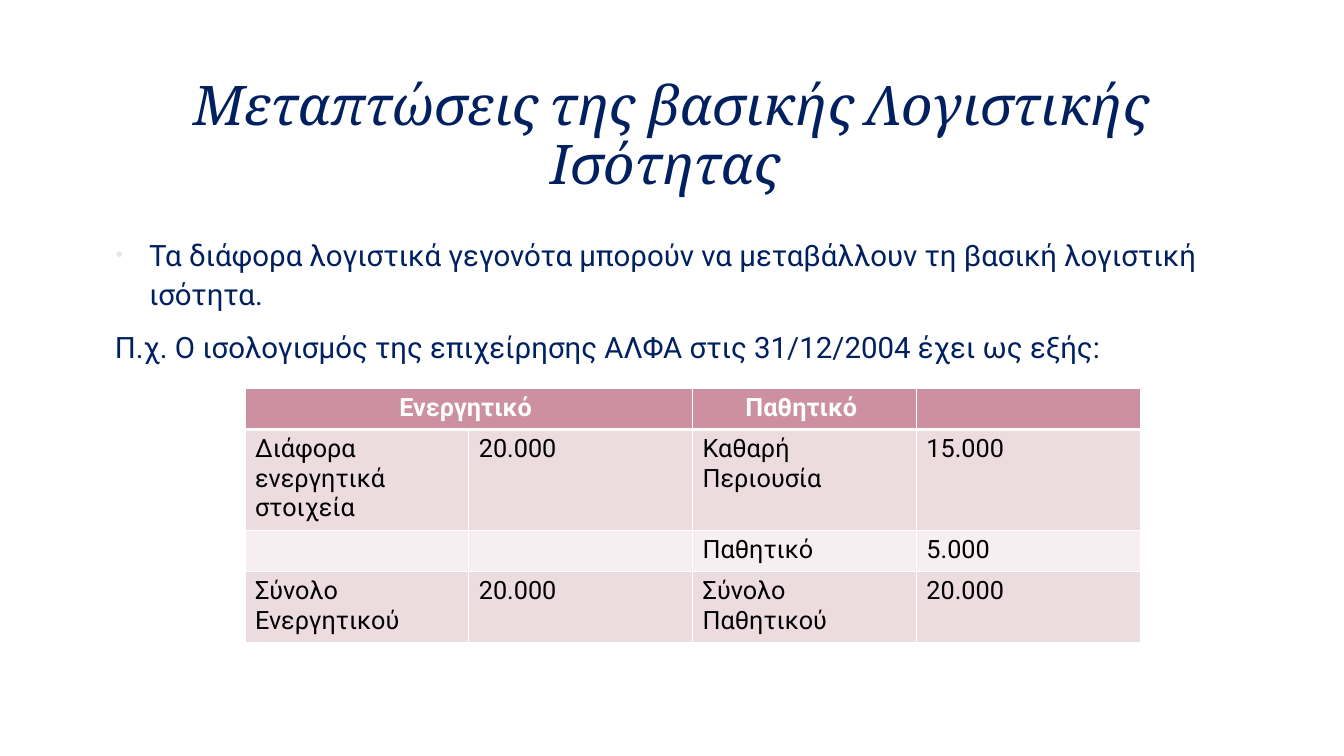
from pptx import Presentation
from pptx.dml.color import RGBColor
from pptx.enum.text import MSO_ANCHOR, PP_ALIGN
from pptx.oxml import parse_xml
from pptx.oxml.ns import nsdecls, qn
from pptx.util import Inches, Pt

CENTER, LEFT = PP_ALIGN.CENTER, PP_ALIGN.LEFT
TOP, MIDDLE = MSO_ANCHOR.TOP, MSO_ANCHOR.MIDDLE

THEME = {
    "title_font": "Cambria", "body_font": "Roboto",
    "title_size": 39, "body_size": 21, "table_size": 18,
    "navy": "002060", "outline": "404040", "bullet": "E2E8E6",
    "white": "FFFFFF", "black": "000000",
    "header": "CC90A0", "bands": ["ECDBDF", "F6EEF0"],
}


def style_font(paragraph, name, size, color):
    font = paragraph.font
    font.name = name
    font.size = Pt(size)
    font.color.rgb = RGBColor.from_string(color)


def add_text_effects(paragraph):
    properties = paragraph._p.pPr.find(qn("a:defRPr"))
    properties.insert(0, parse_xml(
        f'<a:ln w="9525" {nsdecls("a")}><a:solidFill><a:srgbClr val="{THEME["outline"]}">'
        '<a:alpha val="10000"/></a:srgbClr></a:solidFill></a:ln>'))
    properties.find(qn("a:solidFill")).addnext(parse_xml(
        f'<a:effectLst {nsdecls("a")}><a:outerShdw blurRad="38100" dist="25400" dir="2700000">'
        '<a:srgbClr val="000000"><a:alpha val="50000"/></a:srgbClr></a:outerShdw></a:effectLst>'))


presentation = Presentation()
presentation.slide_width = Inches(13.33)
presentation.slide_height = Inches(7.5)
slide = presentation.slides.add_slide(presentation.slide_layouts[6])

title_box = slide.shapes.add_textbox(Inches(1), Inches(0.67), Inches(11.32), Inches(1.38))
title_box.text_frame.word_wrap = True
title_box.text_frame.vertical_anchor = MIDDLE
title = title_box.text_frame.paragraphs[0]
title.text = "Μεταπτώσεις της βασικής Λογιστικής Ισότητας "
title.alignment = CENTER
title.line_spacing = 0.9
style_font(title, THEME["title_font"], THEME["title_size"], THEME["navy"])
title.font.italic = True
add_text_effects(title)

body_box = slide.shapes.add_textbox(Inches(1), Inches(2.27), Inches(11.32), Inches(4.06))
body = body_box.text_frame
body.word_wrap = True
body.vertical_anchor = TOP
body_lines = [
    ("Τα διάφορα λογιστικά γεγονότα μπορούν να μεταβάλλουν τη βασική λογιστική ισότητα.", 0.38, -0.33),
    ("Π.χ. Ο ισολογισμός της επιχείρησης ΑΛΦΑ στις 31/12/2004 έχει ως εξής:", 0.04, 0),
]
for index, (text, margin, indent) in enumerate(body_lines):
    paragraph = body.add_paragraph() if index else body.paragraphs[0]
    paragraph.text = text
    paragraph.line_spacing = 1.1
    paragraph.space_before = Pt(4.2)
    paragraph.space_after = Pt(6)
    style_font(paragraph, THEME["body_font"], THEME["body_size"], THEME["navy"])
    add_text_effects(paragraph)
    properties = paragraph._p.pPr
    properties.set("marL", str(Inches(margin)))
    properties.set("indent", str(Inches(indent)))
    if indent:
        default_run = properties.find(qn("a:defRPr"))
        for bullet_part in (
            f'<a:buClr {nsdecls("a")}><a:srgbClr val="{THEME["bullet"]}"/></a:buClr>',
            f'<a:buSzPct {nsdecls("a")} val="70000"/>',
            f'<a:buFont {nsdecls("a")} typeface="Arial"/>',
            f'<a:buChar {nsdecls("a")} char="•"/>',
        ):
            default_run.addprevious(parse_xml(bullet_part))

balance_sheet = [
    ["Ενεργητικό ", "", "Παθητικό ", ""],
    ["Διάφορα ενεργητικά στοιχεία", "20.000", "Καθαρή Περιουσία", "15.000"],
    ["", "", "Παθητικό", "5.000"],
    ["Σύνολο Ενεργητικού", "20.000", "Σύνολο Παθητικού", "20.000"],
]
table = slide.shapes.add_table(
    4, 4, Inches(2.43), Inches(3.85), Inches(8.88), Inches(1.64)).table
for column in table.columns:
    column.width = Inches(2.22)
for row in table.rows:
    row.height = Inches(0.41)
table.cell(0, 0).merge(table.cell(0, 1))

for row_index, values in enumerate(balance_sheet):
    is_header = row_index == 0
    fill_color = THEME["header"] if is_header else THEME["bands"][(row_index - 1) % 2]
    edge_widths = {"L": 1, "R": 1, "T": 3 if row_index == 1 else 1, "B": 3 if is_header else 1}
    for column_index, value in enumerate(values):
        cell = table.cell(row_index, column_index)
        cell.fill.solid()
        cell.fill.fore_color.rgb = RGBColor.from_string(fill_color)
        paragraph = cell.text_frame.paragraphs[0]
        paragraph.text = value
        paragraph.alignment = CENTER if is_header else LEFT
        style_font(paragraph, THEME["body_font"], THEME["table_size"],
                   THEME["white"] if is_header else THEME["black"])
        paragraph.font.bold = is_header
        cell_properties = cell._tc.get_or_add_tcPr()
        for position, (edge, width) in enumerate(edge_widths.items()):
            cell_properties.insert(position, parse_xml(
                f'<a:ln{edge} w="{Pt(width)}" {nsdecls("a")}><a:solidFill>'
                f'<a:srgbClr val="{THEME["white"]}"/></a:solidFill></a:ln{edge}>'))

presentation.save("out.pptx")
